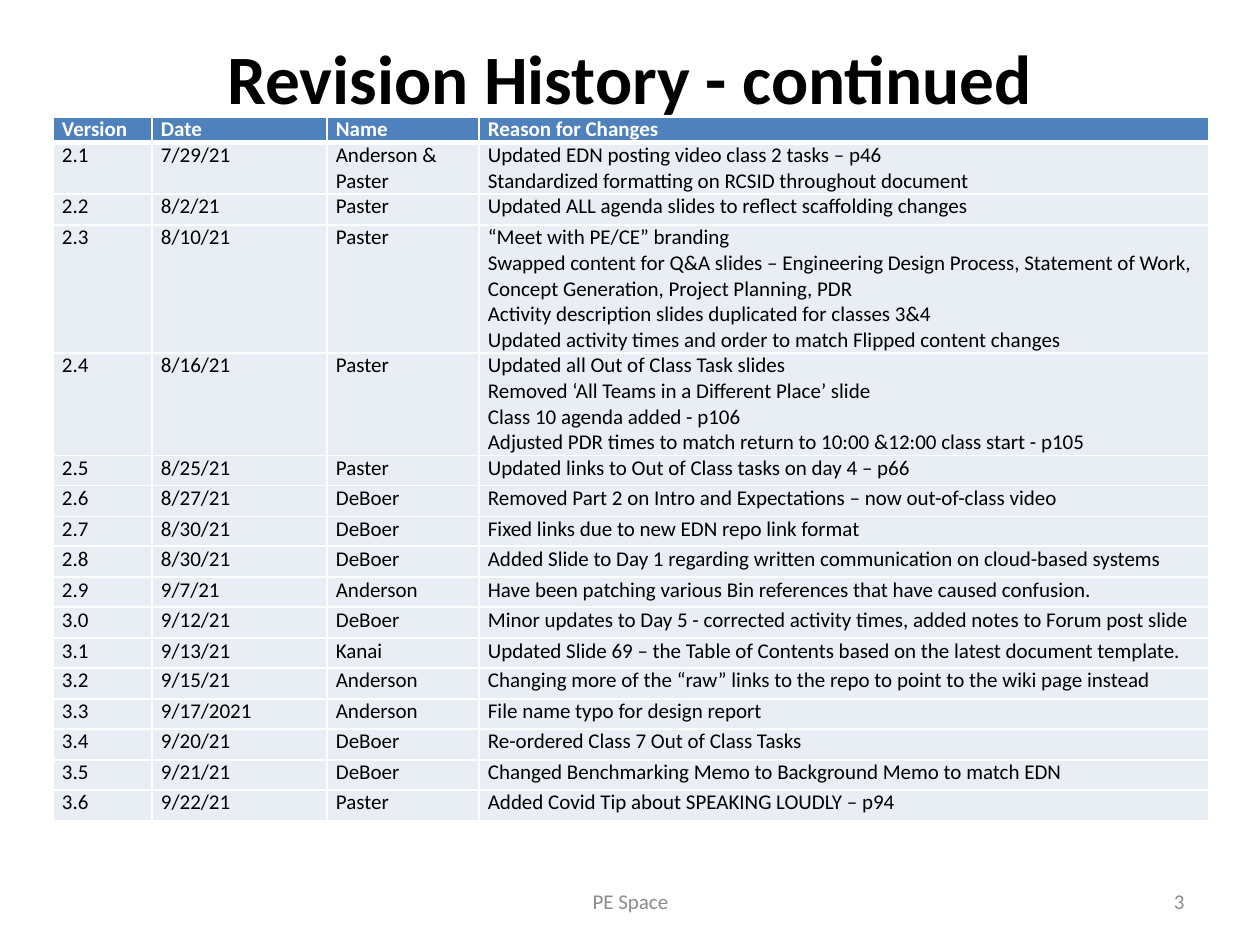
from pptx import Presentation
from pptx.util import Emu, Pt
from pptx.dml.color import RGBColor as Rgb
from pptx.enum.text import MSO_ANCHOR as Anchor, PP_ALIGN as Align
from pptx.oxml.ns import qn
from lxml.etree import SubElement as Sub

PX = 914400 // 126
COLORS = {"ink": "000000", "white": "FFFFFF", "head": "4F81BD",
          "row": "E9EDF4", "foot": "8C8C8C"}
COLS = [99, 175, 152, 730]
HEIGHTS = [25, 51, 31, 128, 102] + [30, 31] * 6
ROWS = [
    ("Version", "Date", "Name", "Reason for Changes"),
    ("2.1", "7/29/21", "Anderson & Paster",
     "Updated EDN posting video class 2 tasks – p46\n"
     "Standardized formatting on RCSID throughout document"),
    ("2.2", "8/2/21", "Paster", "Updated ALL agenda slides to reflect scaffolding changes"),
    ("2.3", "8/10/21", "Paster",
     "“Meet with PE/CE” branding\n"
     "Swapped content for Q&A slides – Engineering Design Process, Statement of Work, "
     "Concept Generation, Project Planning, PDR\n"
     "Activity description slides duplicated for classes 3&4\n"
     "Updated activity times and order to match Flipped content changes"),
    ("2.4", "8/16/21", "Paster",
     "Updated all Out of Class Task slides\n"
     "Removed ‘All Teams in a Different Place’ slide\n"
     "Class 10 agenda added - p106\n"
     "Adjusted PDR times to match return to 10:00 &12:00 class start - p105"),
    ("2.5", "8/25/21", "Paster", "Updated links to Out of Class tasks on day 4 – p66"),
    ("2.6", "8/27/21", "DeBoer",
     "Removed Part 2 on Intro and Expectations – now out-of-class video"),
    ("2.7", "8/30/21", "DeBoer", "Fixed links due to new EDN repo link format"),
    ("2.8", "8/30/21", "DeBoer",
     "Added Slide to Day 1 regarding written communication on cloud-based systems"),
    ("2.9", "9/7/21", "Anderson",
     "Have been patching various Bin references that have caused confusion."),
    ("3.0", "9/12/21", "DeBoer",
     "Minor updates to Day 5 - corrected activity times, added notes to Forum post slide"),
    ("3.1", "9/13/21", "Kanai",
     "Updated Slide 69 – the Table of Contents based on the latest document template."),
    ("3.2", "9/15/21", "Anderson",
     "Changing more of the “raw” links to the repo to point to the wiki page instead"),
    ("3.3", "9/17/2021", "Anderson", "File name typo for design report"),
    ("3.4", "9/20/21", "DeBoer", "Re-ordered Class 7 Out of Class Tasks"),
    ("3.5", "9/21/21", "DeBoer",
     "Changed Benchmarking Memo to Background Memo to match EDN"),
    ("3.6", "9/22/21", "Paster", "Added Covid Tip about SPEAKING LOUDLY – p94"),
]


def px(n):
    return Emu(n * PX)


def apply(item, vals):
    for key, val in vals.items():
        setattr(item, key, val)


def write(frame, text, size, color, bold=False, align=Align.LEFT):
    frame.text = text
    for para in frame.paragraphs:
        para.alignment = align
        apply(para.font, {"name": "Calibri", "size": Pt(size), "bold": bold})
        para.font.color.rgb = Rgb.from_string(COLORS[color])


def edge(cell, head):
    """Draw white cell borders, with a thick one under the header."""
    props = cell._tc.get_or_add_tcPr()
    for side in "LRTB":
        wide = 3 if head and side == "B" else 1
        line = Sub(props, qn(f"a:ln{side}"), w=str(Pt(wide)))
        fill = Sub(line, qn("a:solidFill"))
        Sub(fill, qn("a:srgbClr"), val=COLORS["white"])


def add_title(slide, box):
    title = slide.shapes.title
    apply(title, dict(zip(("left", "top", "width", "height"), map(px, box))))
    write(title.text_frame, "Revision History - continued", 39.6, "ink", True, Align.CENTER)
    apply(title.text_frame, {"vertical_anchor": Anchor.TOP, "margin_top": 0,
                             "word_wrap": True})


def add_log(slide, left, top):
    table = slide.shapes.add_table(len(ROWS), len(COLS), px(left), px(top),
                                   px(sum(COLS)), px(sum(HEIGHTS))).table
    table.horz_banding = False
    for col, wide in zip(table.columns, COLS):
        col.width = px(wide)
    for r, (row, high, texts) in enumerate(zip(table.rows, HEIGHTS, ROWS)):
        row.height = px(high)
        head = r == 0
        for cell, text in zip(row.cells, texts):
            apply(cell, {"margin_left": px(9), "margin_right": px(9),
                         "margin_top": 0, "margin_bottom": 0})
            write(cell.text_frame, text, 12, "white" if head else "ink", head)
            edge(cell, head)
            cell.fill.solid()
            cell.fill.fore_color.rgb = Rgb.from_string(COLORS["head" if head else "row"])


def add_foot(slide, box, text, align):
    frame = slide.shapes.add_textbox(*map(px, box)).text_frame
    apply(frame, {"word_wrap": True, "vertical_anchor": Anchor.MIDDLE})
    write(frame, text, 12, "foot", align=align)


def main():
    deck = Presentation()
    apply(deck, {"slide_width": px(1260), "slide_height": px(945)})
    slide = deck.slides.add_slide(deck.slide_layouts[5])
    add_title(slide, (63, 35, 1134, 158))
    add_log(slide, 53, 117)
    add_foot(slide, (431, 876, 399, 50), "PE Space", Align.CENTER)
    add_foot(slide, (903, 876, 294, 50), "3", Align.RIGHT)
    deck.save("out.pptx")


if __name__ == "__main__":
    main()
